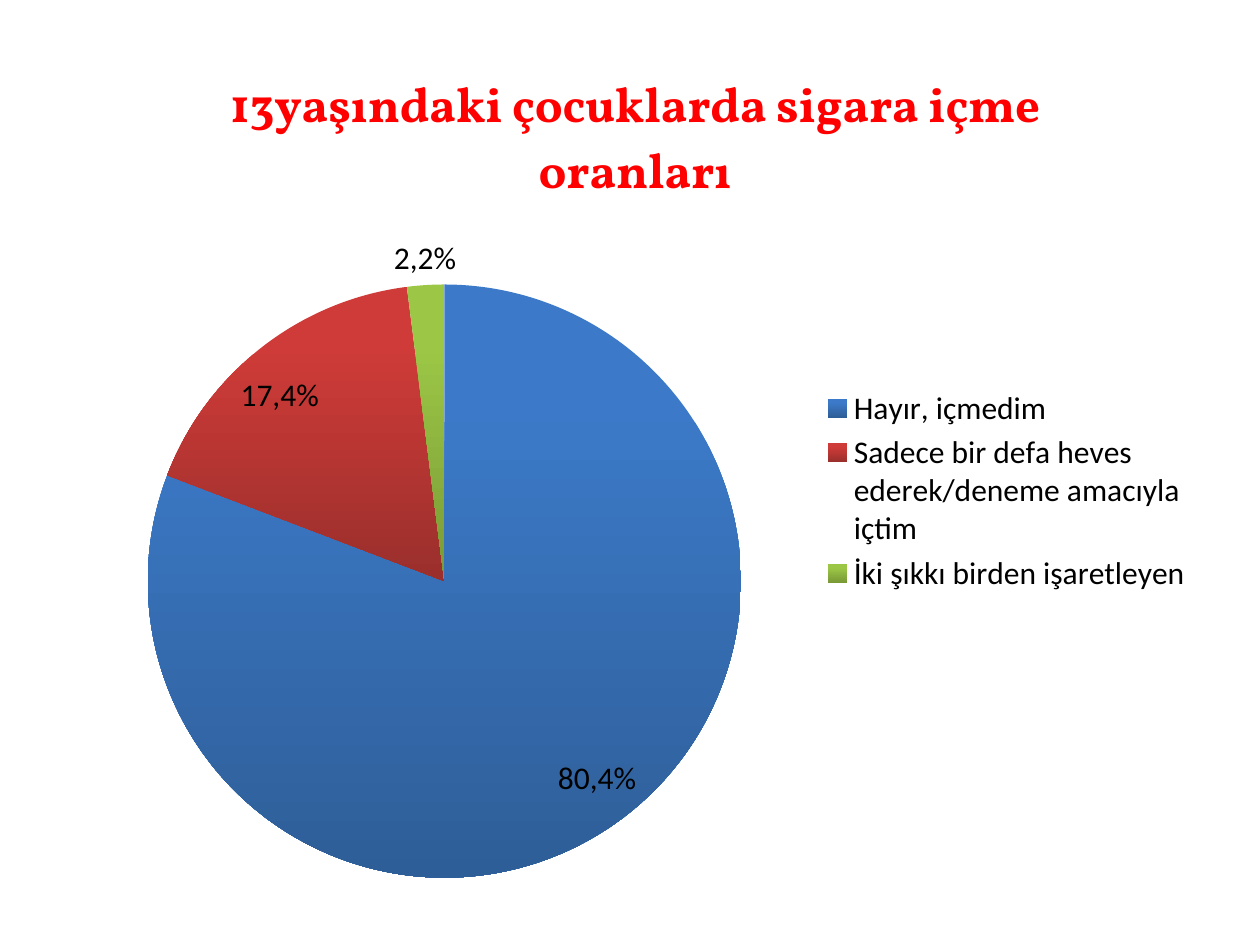
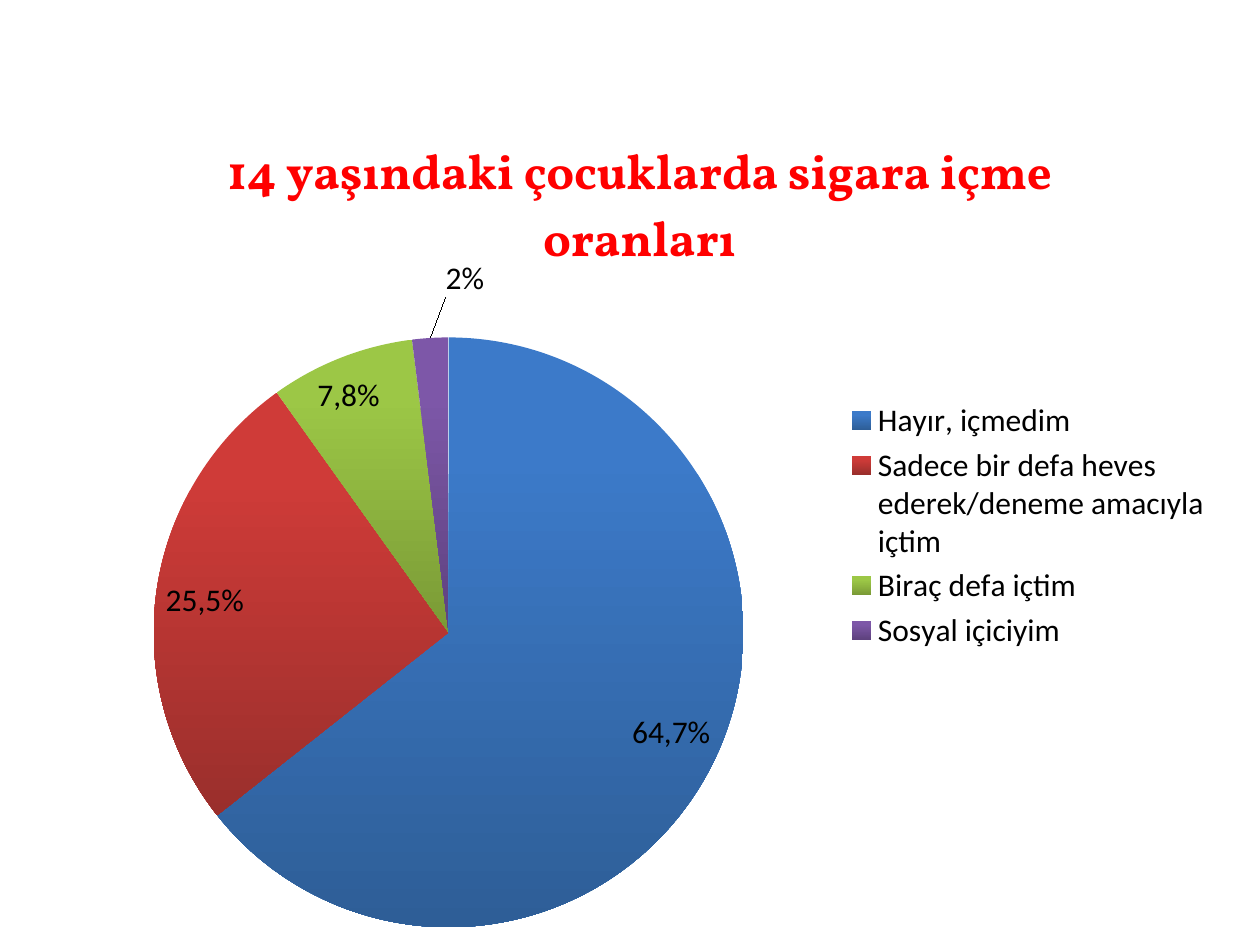
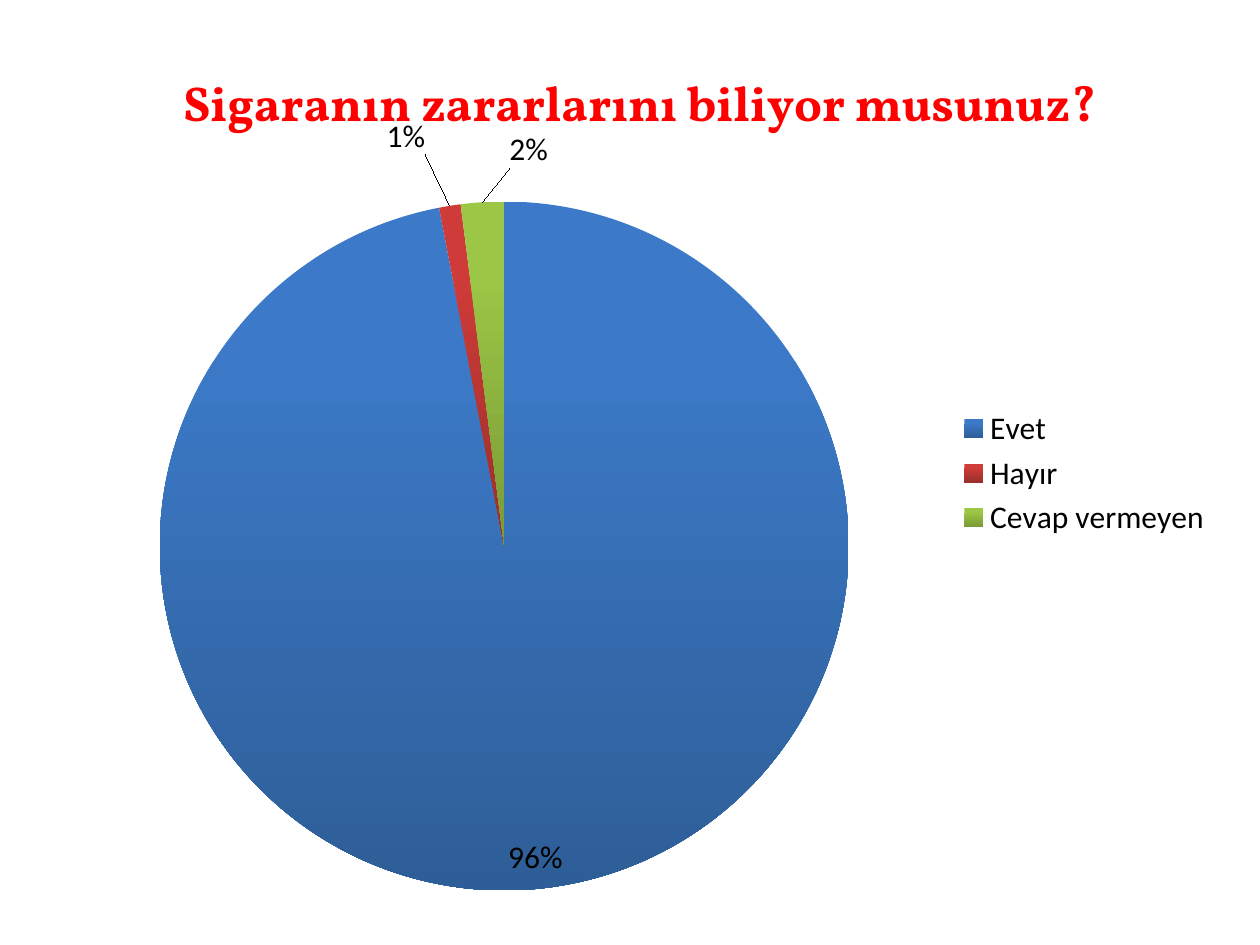
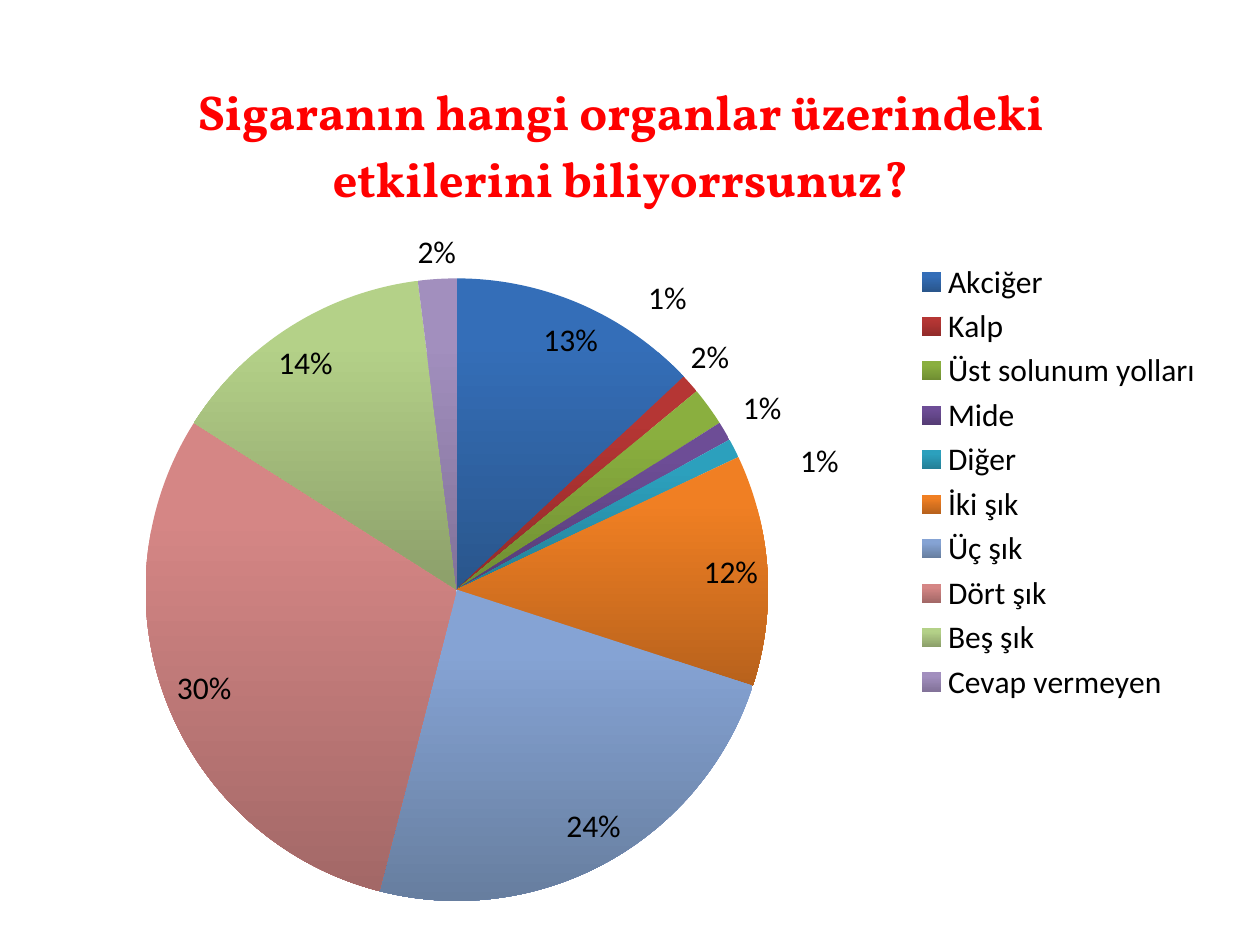
import pptx
import pptx.util
import pptx.chart.data
import pptx.dml.color
import pptx.enum.chart
import pptx.oxml

Inches = pptx.util.Inches
Pt = pptx.util.Pt
RGBColor = pptx.dml.color.RGBColor
BEST_FIT = pptx.enum.chart.XL_LABEL_POSITION.BEST_FIT

COLORS = {
    "title": "FF0000",
    "text": "000000",
    "blue": ("3C7AC9", "2E5E97"),
    "red": ("CF3B38", "9A2F2C"),
    "green": ("9CC746", "7A9A36"),
    "purple": ("7D57A8", "5E427E"),
    "deep blue": ("346EB8", "2A568C"),
    "deep red": ("B53634", "922B2A"),
    "deep green": ("8AAF3F", "6F8D32"),
    "deep purple": ("6D4D96", "553C75"),
    "teal": ("2CA0BD", "247F96"),
    "orange": ("F07F23", "B8621C"),
    "pale blue": ("85A3D4", "677E9F"),
    "pale red": ("D58685", "A36867"),
    "pale green": ("B4D188", "8C9F6A"),
    "pale purple": ("A28FBE", "827299"),
}
BASIC_COLORS = ["blue", "red", "green", "purple"]
ORGAN_COLORS = ["deep blue", "deep red", "deep green", "deep purple", "teal",
                "orange", "pale blue", "pale red", "pale green", "pale purple"]
ONCE = "Sadece bir defa heves ederek/deneme amacıyla içtim"

SURVEYS = [
    {
        "title": "13yaşındaki çocuklarda sigara içme oranları",
        "series": "Series 1",
        "frame": (0.51, 0.29, 9.06, 7.21),
        "pie": (1.17, 2.26, 4.71),
        "answers": {"Hayır, içmedim": 80, ONCE: 17, "İki şıkkı birden işaretleyen": 2},
        "colors": BASIC_COLORS,
        "texts": {0: "80,4%", 1: "17,4%", 2: "2,2%"},
        "offsets": {},
        "leaders": True,
    },
    {
        "title": "14 yaşındaki çocuklarda sigara içme oranları",
        "series": "Series 1",
        "frame": (0.43, 0.84, 9.29, 6.66),
        "pie": (1.22, 2.68, 4.68),
        "answers": {"Hayır, içmedim": 65, ONCE: 26, "Biraç defa içtim": 8, "Sosyal içiciyim": 2},
        "colors": BASIC_COLORS,
        "texts": {0: "64,7%", 1: "25,5%", 2: "7,8%"},
        "offsets": {3: (0.03, -0.04)},
        "leaders": True,
    },
    {
        "title": "Sigaranın zararlarını biliyor musunuz?",
        "series": "Sigaranın zararlarını biliyor musunuz?",
        "frame": (0.43, 0.29, 9.29, 6.93),
        "pie": (1.27, 1.6, 5.47),
        "answers": {"Evet": 96, "Hayır": 1, "Cevap vermeyen": 2},
        "colors": BASIC_COLORS,
        "texts": {0: "96%"},
        "offsets": {1: (-0.02, -0.05), 2: (0.04, -0.03)},
        "leaders": True,
    },
    {
        "title": "Sigaranın hangi organlar üzerindeki etkilerini biliyorrsunuz?",
        "series": "Sigaranın hangi organlar üzerindeki etkilerini biliyorrsunuz?",
        "frame": (0.2, 0.36, 9.45, 6.93),
        "pie": (1.15, 2.21, 4.94),
        "answers": {"Akciğer": 13, "Kalp": 1, "Üst solunum yolları": 2, "Mide": 1, "Diğer": 1,
                    "İki şık": 12, "Üç şık": 24, "Dört şık": 30, "Beş şık": 14, "Cevap vermeyen": 2},
        "colors": ORGAN_COLORS,
        "texts": {},
        "offsets": {1: (-0.04, -0.07), 2: (-0.02, -0.03), 3: (0.01, 0), 4: (0.05, 0.04)},
        "leaders": False,
    },
]


def make_layout(settings):
    namespace = "http://schemas.openxmlformats.org/drawingml/2006/chart"
    items = "".join(f'<c:{name} val="{value}"/>' for name, value in settings.items())
    return pptx.oxml.parse_xml(
        f'<c:layout xmlns:c="{namespace}"><c:manualLayout>{items}</c:manualLayout></c:layout>')


def style_font(font, size, color, name, bold=False):
    font.size = Pt(size)
    font.name = name
    font.bold = bold
    font.color.rgb = RGBColor.from_string(COLORS[color])


deck = pptx.Presentation()
deck.slide_width = Inches(10)
deck.slide_height = Inches(7.5)

for survey in SURVEYS:
    page = deck.slides.add_slide(deck.slide_layouts[6])
    data = pptx.chart.data.CategoryChartData()
    data.categories = list(survey["answers"])
    data.add_series(survey["series"], list(survey["answers"].values()))
    left, top, width, height = survey["frame"]
    chart = page.shapes.add_chart(
        pptx.enum.chart.XL_CHART_TYPE.PIE,
        Inches(left), Inches(top), Inches(width), Inches(height), data).chart
    style_font(chart.font, 18, "text", "Calibri")

    chart.has_title = True
    title_frame = chart.chart_title.text_frame
    title_frame.text = survey["title"]
    style_font(title_frame.paragraphs[0].runs[0].font, 28, "title", "Vollkorn", True)
    chart.chart_title.include_in_layout = False

    chart.has_legend = True
    chart.legend.position = pptx.enum.chart.XL_LEGEND_POSITION.RIGHT
    chart.legend.include_in_layout = False

    plot = chart.plots[0]
    plot.vary_by_categories = True
    series = plot.series[0]
    labels = series.data_labels
    labels.show_value = False
    labels.show_percentage = True
    labels.number_format = "0%"
    labels.number_format_is_linked = False
    labels.position = BEST_FIT

    for index in range(len(survey["answers"])):
        fill = series.points[index].format.fill
        fill.gradient()
        fill.gradient_angle = 270
        for stop, shade, position in zip(fill.gradient_stops, COLORS[survey["colors"][index]], (0.2, 1)):
            stop.color.rgb = RGBColor.from_string(shade)
            stop.position = position

    for index, text in survey["texts"].items():
        label = series.points[index].data_label
        label.text_frame.text = text
        style_font(label.text_frame.paragraphs[0].runs[0].font, 18, "text", "Calibri")
        label.position = BEST_FIT

    for index, (shift_x, shift_y) in survey["offsets"].items():
        series.points[index].data_label.position = BEST_FIT
        label_node = chart._chartSpace.xpath(f".//c:dLbl[c:idx/@val='{index}']")[0]
        label_node.insert(1, make_layout({"x": shift_x, "y": shift_y}))
        label_node.xpath("c:showVal")[0].set("val", "0")
        label_node.xpath("c:showPercent")[0].set("val", "1")

    for leader_node in chart._chartSpace.xpath(".//c:showLeaderLines"):
        leader_node.set("val", str(int(survey["leaders"])))

    pie_left, pie_top, diameter = survey["pie"]
    plot_area = chart._chartSpace.xpath("c:chart/c:plotArea")[0]
    for old_layout in plot_area.xpath("c:layout"):
        plot_area.remove(old_layout)
    plot_area.insert(0, make_layout({
        "layoutTarget": "inner", "xMode": "edge", "yMode": "edge",
        "x": round((pie_left - left) / width, 3), "y": round((pie_top - top) / height, 3),
        "w": round(diameter / width, 3), "h": round(diameter / height, 3)}))

deck.save("out.pptx")
